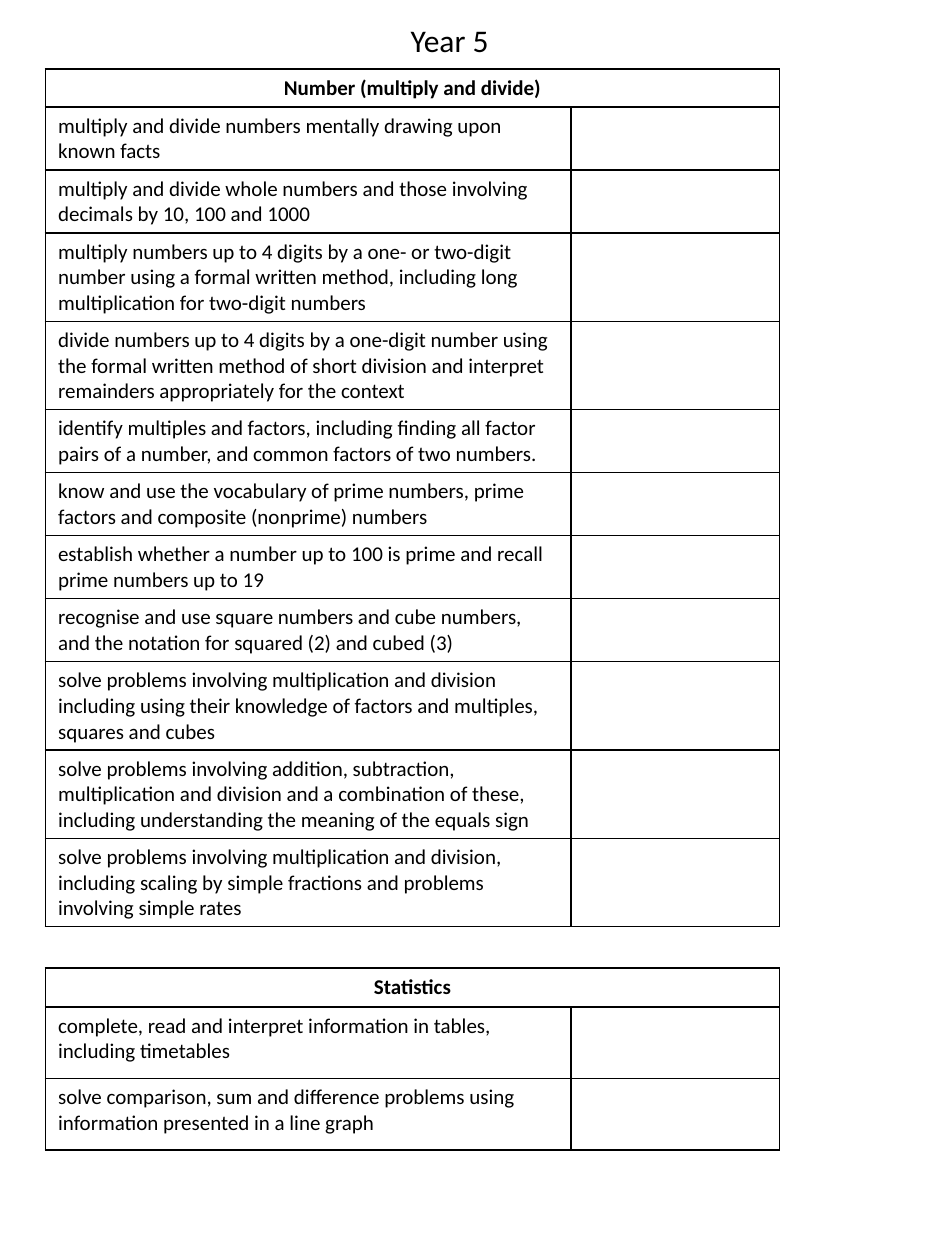
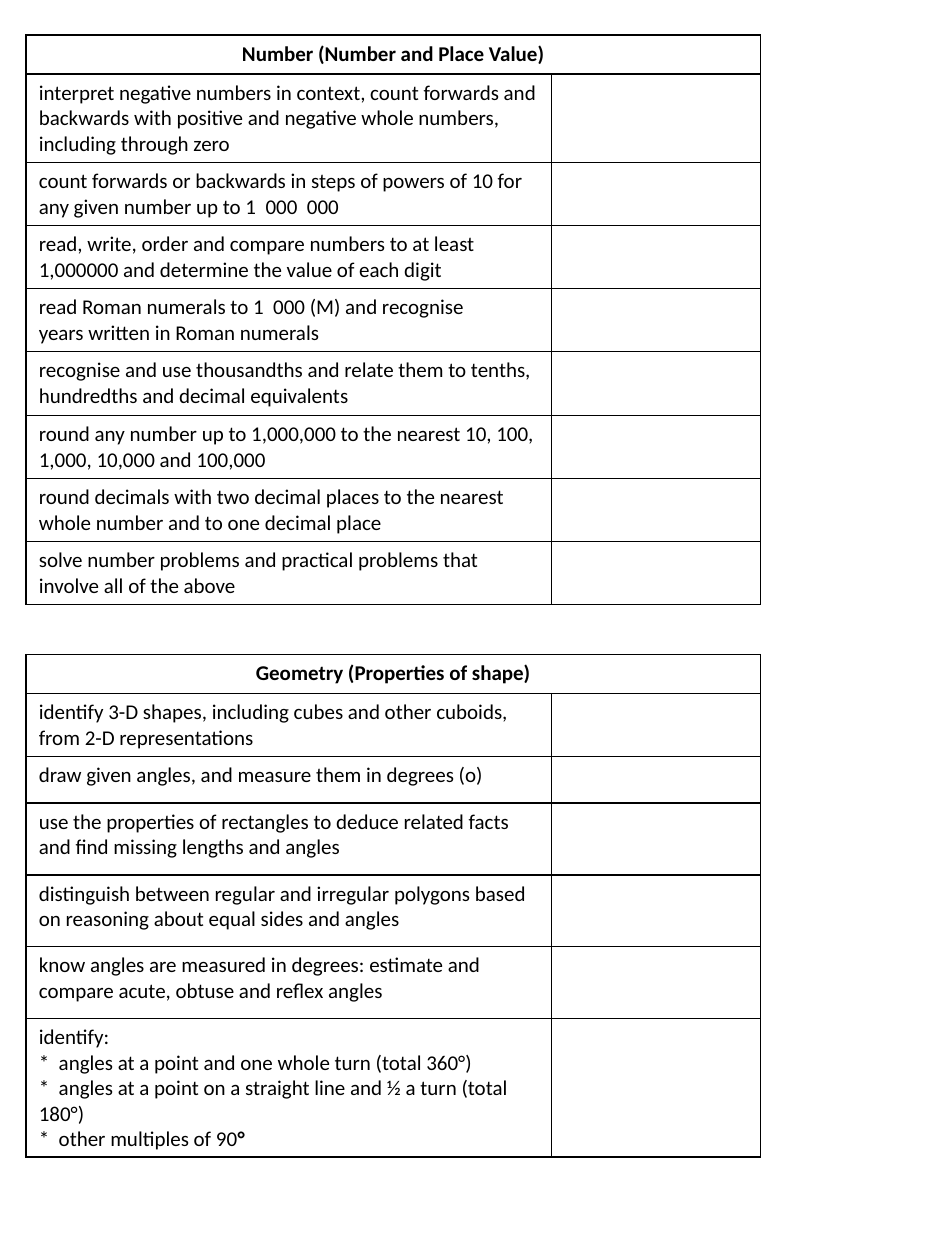
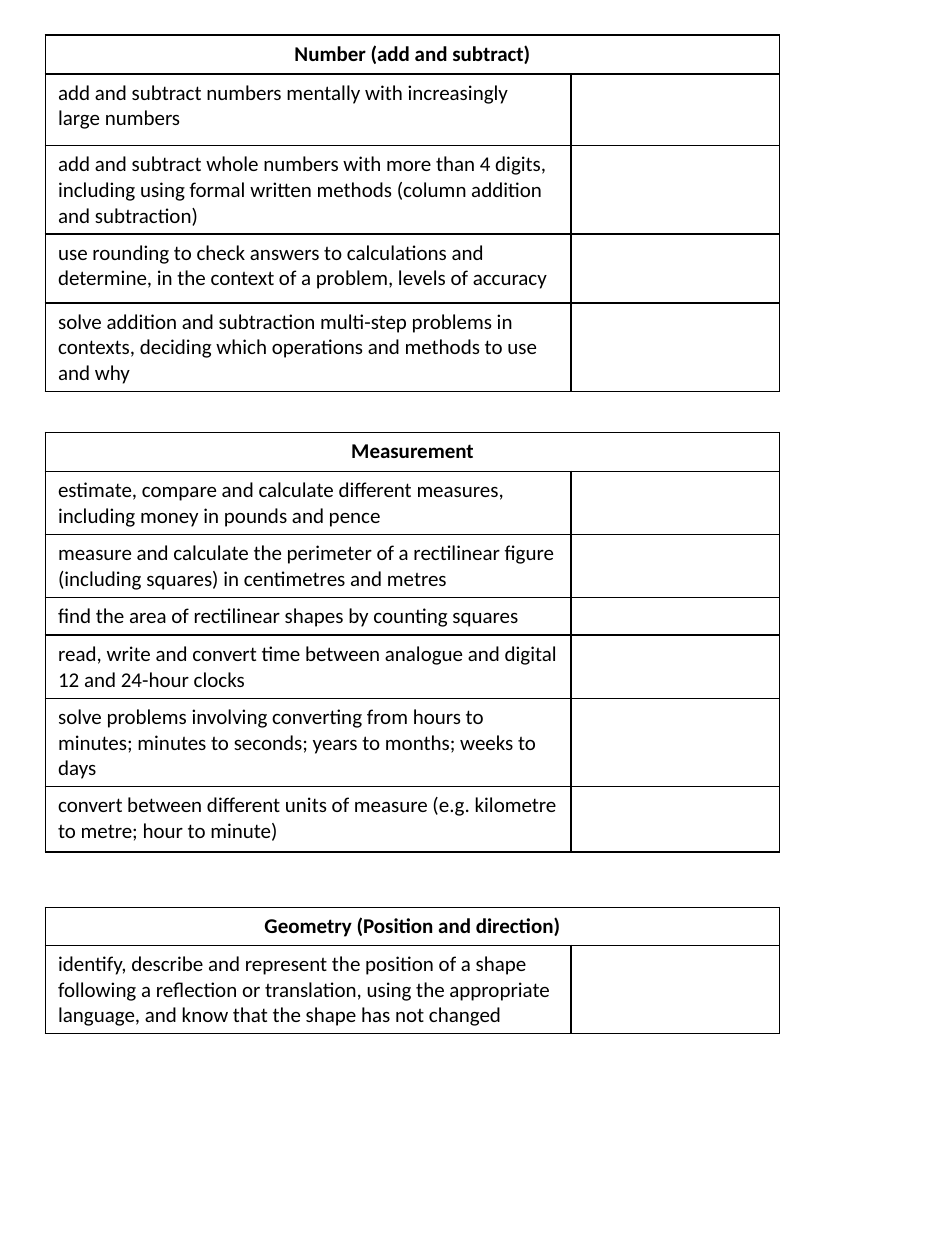
import pptx
import pptx.util
import pptx.dml.color
import pptx.enum.text
import pptx.oxml
import pptx.oxml.ns

Pt = pptx.util.Pt
BLACK = pptx.dml.color.RGBColor(0, 0, 0)
WHITE = pptx.dml.color.RGBColor(255, 255, 255)
ALIGN = pptx.enum.text.PP_ALIGN


class Deck:
    font = "Calibri"
    size = 12
    widths = (300.25, 119.25)
    edge = 1

    def __init__(self):
        self.show = pptx.Presentation()
        self.show.slide_width = Pt(540)
        self.show.slide_height = Pt(720)
        self.slide = None

    def page(self, layout=6):
        self.slide = self.show.slides.add_slide(self.show.slide_layouts[layout])
        fill = self.slide.background.fill
        fill.solid()
        fill.fore_color.rgb = WHITE

    def style(self, run, size, bold=False):
        run.font.name = self.font
        run.font.size = Pt(size)
        run.font.bold = bold
        run.font.color.rgb = BLACK

    def title(self, text, left, top, width, height):
        shape = self.slide.shapes.title
        shape.left, shape.top = Pt(left), Pt(top)
        shape.width, shape.height = Pt(width), Pt(height)
        frame = shape.text_frame
        frame.text = text
        frame.word_wrap = False
        frame.auto_size = pptx.enum.text.MSO_AUTO_SIZE.SHAPE_TO_FIT_TEXT
        frame.vertical_anchor = pptx.enum.text.MSO_ANCHOR.TOP
        frame.paragraphs[0].alignment = ALIGN.LEFT
        self.style(frame.paragraphs[0].runs[0], 18)

    def border(self, cell):
        cell.fill.background()
        props = cell._tc.get_or_add_tcPr()
        for spot, side in enumerate("LRTB"):
            line = pptx.oxml.parse_xml(
                f'<a:ln{side} {pptx.oxml.ns.nsdecls("a")} w="{Pt(self.edge)}">'
                f'<a:solidFill><a:srgbClr val="{BLACK}"/></a:solidFill></a:ln{side}>')
            props.insert(spot, line)

    def label(self, cell, text, bold=False):
        cell.text_frame.text = text
        for para in cell.text_frame.paragraphs:
            for run in para.runs:
                self.style(run, self.size, bold)
            if not para.runs:
                para._p.get_or_add_endParaRPr().set("sz", str(self.size * 100))

    def table(self, left, top, height, head, goals, rows):
        frame = self.slide.shapes.add_table(
            len(rows), 2, Pt(left), Pt(top), Pt(sum(self.widths)), Pt(height))
        grid = frame.table
        grid.first_row = False
        grid.horz_banding = False
        for col, width in zip(grid.columns, self.widths):
            col.width = Pt(width)
        for row, tall in zip(grid.rows, rows):
            row.height = Pt(tall)
        frame.height = Pt(height)
        for cell in grid.iter_cells():
            self.border(cell)
            self.label(cell, "")
        grid.cell(0, 0).merge(grid.cell(0, 1))
        self.label(grid.cell(0, 0), head, True)
        grid.cell(0, 0).text_frame.paragraphs[0].alignment = ALIGN.CENTER
        for spot, goal in enumerate(goals, 1):
            self.label(grid.cell(spot, 0), goal)
        return grid


def main():
    deck = Deck()
    near, far = 15, 26

    deck.page(5)
    deck.table(far, 39.5, 489.6, "Number (multiply and divide)", [
        "multiply and divide numbers mentally drawing upon known facts",
        "multiply and divide whole numbers and those involving decimals by 10, 100 and 1000",
        "multiply numbers up to 4 digits by a one- or two-digit number using a formal written "
        "method, including long multiplication for two-digit numbers",
        "divide numbers up to 4 digits by a one-digit number using the formal written method of "
        "short division and interpret\nremainders appropriately for the context",
        "identify multiples and factors, including finding all factor pairs of a number, and "
        "common factors of two numbers.",
        "know and use the vocabulary of prime numbers, prime factors and composite (nonprime) numbers",
        "establish whether a number up to 100 is prime and recall prime numbers up to 19",
        "recognise and use square numbers and cube numbers, and the notation for squared (2) and cubed (3)",
        "solve problems involving multiplication and division\n"
        "including using their knowledge of factors and multiples, squares and cubes",
        "solve problems involving addition, subtraction, multiplication and division and a "
        "combination of these, including understanding the meaning of the equals sign",
        "solve problems involving multiplication and division, including scaling by simple "
        "fractions and problems involving simple rates",
    ], [21, 24] + [34] * 10)
    deck.title("Year 5", 227.5, 8.6, 60, 29)
    deck.table(far, 553, 103.7, "Statistics", [
        "complete, read and interpret information in tables, including timetables",
        "solve comparison, sum and difference problems using information presented in a line graph",
    ], [22.3, 41, 41])

    deck.page()
    deck.table(near, 20, 325.4, "Number (Number and Place Value)", [
        "interpret negative numbers in context, count forwards and backwards with positive and "
        "negative whole numbers, including through zero",
        "count forwards or backwards in steps of powers of 10 for any given number up to 1  000  000",
        "read, write, order and compare numbers to at least 1,000000 and determine the value of each digit",
        "read Roman numerals to 1  000 (M) and recognise\nyears written in Roman numerals",
        "recognise and use thousandths and relate them to tenths, hundredths and decimal equivalents",
        "round any number up to 1,000,000 to the nearest 10, 100, 1,000, 10,000 and 100,000",
        "round decimals with two decimal places to the nearest\nwhole number and to one decimal place",
        "solve number problems and practical problems that involve all of the above",
    ], [22.3, 23, 22.3, 24, 25, 36.5, 34, 34, 21])
    shapes = deck.table(near, 374, 286.6, "Geometry (Properties of shape)", [
        "identify 3-D shapes, including cubes and other cuboids, from 2-D representations",
        "draw given angles, and measure them in degrees (o)",
        "use the properties of rectangles to deduce related facts and find missing lengths and angles",
        "distinguish between regular and irregular polygons based on reasoning about equal sides and angles",
        "know angles are measured in degrees: estimate and compare acute, obtuse and reflex angles",
        "identify:\n*  angles at a point and one whole turn (total 360°)\n"
        "*  angles at a point on a straight line and ½ a turn (total 180°)\n"
        "*  other multiples of 90",
    ], [22.3, 29, 26.6] + [41] * 4)
    degree = shapes.cell(6, 0).text_frame.paragraphs[-1].add_run()
    degree.text = "°"
    deck.style(degree, deck.size, True)

    deck.page()
    deck.table(far, 247, 240.5, "Measurement", [
        "estimate, compare and calculate different measures,\nincluding money in pounds and pence",
        "measure and calculate the perimeter of a rectilinear figure\n"
        "(including squares) in centimetres and metres",
        "find the area of rectilinear shapes by counting squares",
        "read, write and convert time between analogue and digital 12 and 24-hour clocks",
        "solve problems involving converting from hours to\n"
        "minutes; minutes to seconds; years to months; weeks to days",
        "convert between different units of measure (e.g. kilometre to metre; hour to minute)",
    ], [22.3, 34.5, 27.4, 18.7, 22.3, 34, 37.5])
    deck.table(far, 20, 203.8, "Number (add and subtract)", [
        "add and subtract numbers mentally with increasingly\nlarge numbers",
        "add and subtract whole numbers with more than 4 digits, including using formal written "
        "methods (column addition and subtraction)",
        "use rounding to check answers to calculations and determine, in the context of a problem, "
        "levels of accuracy",
        "solve addition and subtraction multi-step problems in contexts, deciding which operations "
        "and methods to use and why",
    ], [22.3, 41, 37.5, 39.5, 39.5])
    deck.table(far, 518.5, 72, "Geometry (Position and direction)", [
        "identify, describe and represent the position of a shape following a reflection or "
        "translation, using the appropriate\nlanguage, and know that the shape has not changed",
    ], [15, 28])

    deck.show.save("out.pptx")


if __name__ == "__main__":
    main()
